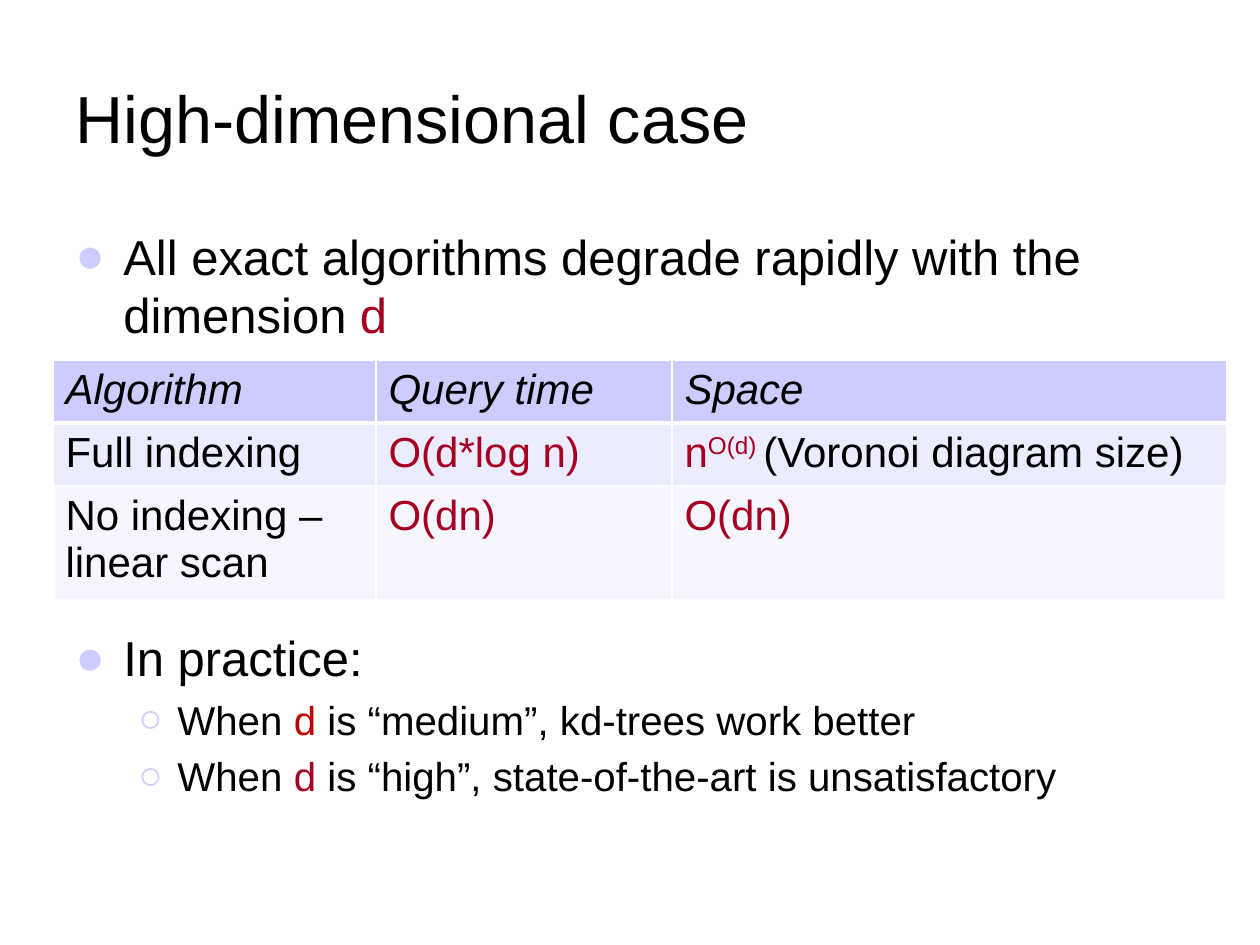
from lxml.etree import SubElement
from pptx import Presentation
from pptx.dml.color import RGBColor
from pptx.enum.text import MSO_ANCHOR as Anchor, PP_ALIGN as Align
from pptx.oxml.ns import qn
from pptx.util import Emu, Pt

PX = 914400 / 126
BLACK, WHITE, CRIMSON, RED, LILAC = "000000", "FFFFFF", "A50021", "C00000", "CCCCFF"


def px(length):
    return Emu(round(length * PX))


def color(value):
    return RGBColor.from_string(value)


class SlideBuilder:
    font = "Arial"
    # For each level: bullet, text size, left margin, hanging indent
    levels = [("●", 28, 48, 48), ("○", 23, 102, 39)]
    leading = 1.2

    def __init__(self, slide):
        self.slide = slide

    def add_spans(self, para, runs, size, italic=False):
        """Add runs given as (text, colour) or (text, colour, baseline)."""
        for text, ink, *baseline in runs:
            span = para.add_run()
            span.text = text
            formats = {"name": self.font, "size": Pt(size), "bold": False, "italic": italic}
            for name, value in formats.items():
                setattr(span.font, name, value)
            span.font.color.rgb = color(ink)
            if baseline:
                span._r.get_or_add_rPr().set("baseline", str(baseline[0]))

    def place(self, shape, *box):
        for name, value in zip(("left", "top", "width", "height"), box):
            setattr(shape, name, px(value))

    def title(self, text, *box):
        title = self.slide.shapes.title
        self.place(title, *box)
        title.text_frame.vertical_anchor = Anchor.MIDDLE
        para = title.text_frame.paragraphs[0]
        para.alignment = Align.LEFT
        self.add_spans(para, [(text, BLACK)], 38)

    def bullets(self, items, *box):
        """Add a list of (level, space before in points, runs)."""
        frame = self.slide.shapes.add_textbox(*map(px, box)).text_frame
        frame.word_wrap = True
        for index, (level, gap, runs) in enumerate(items):
            para = frame.add_paragraph() if index else frame.paragraphs[0]
            mark, size, margin, hang = self.levels[level]
            formats = {"level": level, "space_before": Pt(gap),
                       "line_spacing": Pt(size * self.leading)}
            for name, value in formats.items():
                setattr(para, name, value)
            props = para._p.get_or_add_pPr()
            props.set("marL", str(px(margin)))
            props.set("indent", str(-px(hang)))
            tint = SubElement(props, qn("a:buClr"))
            SubElement(tint, qn("a:srgbClr"), val=LILAC)
            SubElement(props, qn("a:buFont"), typeface=self.font)
            SubElement(props, qn("a:buChar"), char=mark)
            self.add_spans(para, runs, size)

    def borders(self, cell, widths):
        props = cell._tc.get_or_add_tcPr()
        for side, width in widths.items():
            line = SubElement(props, qn(f"a:ln{side}"), w=str(Pt(width)))
            fill = SubElement(line, qn("a:solidFill"))
            SubElement(fill, qn("a:srgbClr"), val=WHITE)

    def table(self, rows, fills, left, top, widths, heights):
        table = self.slide.shapes.add_table(
            len(rows), len(widths), px(left), px(top),
            px(sum(widths)), px(sum(heights))).table
        for column, width in zip(table.columns, widths):
            column.width = px(width)
        for r, (cells, fill, height) in enumerate(zip(rows, fills, heights)):
            table.rows[r].height = px(height)
            for c, runs in enumerate(cells):
                cell = table.cell(r, c)
                self.borders(cell, {"L": 1, "R": 1, "T": 3 if r == 1 else 1,
                                    "B": 3 if r == 0 else 1})
                cell.fill.solid()
                cell.fill.fore_color.rgb = color(fill)
                self.add_spans(cell.text_frame.paragraphs[0], runs, 24, italic=r == 0)


def main():
    deck = Presentation()
    deck.slide_width, deck.slide_height = px(1260), px(945)
    page = SlideBuilder(deck.slides.add_slide(deck.slide_layouts[5]))

    page.title("High-dimensional case", 63, 38, 1134, 158)

    # Bullets, with room for the table between the two main points
    page.bullets([
        (0, 0, [("All exact algorithms degrade rapidly with the dimension ", BLACK),
                ("d", CRIMSON)]),
        (0, 162.4, [("In practice:", BLACK)]),
        (1, 4.6, [("When ", BLACK), ("d", RED),
                  (" is “medium”, kd-trees work better", BLACK)]),
        (1, 4.6, [("When ", BLACK), ("d", CRIMSON),
                  (" is “high”, state-of-the-art is unsatisfactory", BLACK)]),
    ], 63, 220, 1134, 633)

    # Cost comparison
    page.table([
        [[(head, BLACK)] for head in ("Algorithm", "Query time", "Space")],
        [[("Full indexing", BLACK)], [("O(d*log n)", CRIMSON)],
         [("n", CRIMSON), ("O(d) ", CRIMSON, 30000), ("(Voronoi diagram size)", BLACK)]],
        [[("No indexing – linear scan", BLACK)], [("O(dn)", CRIMSON)], [("O(dn)", CRIMSON)]],
    ], [LILAC, "ECECFF", "F6F6FF"], 53, 360, [323, 296, 555], [63, 63, 113])

    deck.save("out.pptx")


if __name__ == "__main__":
    main()
